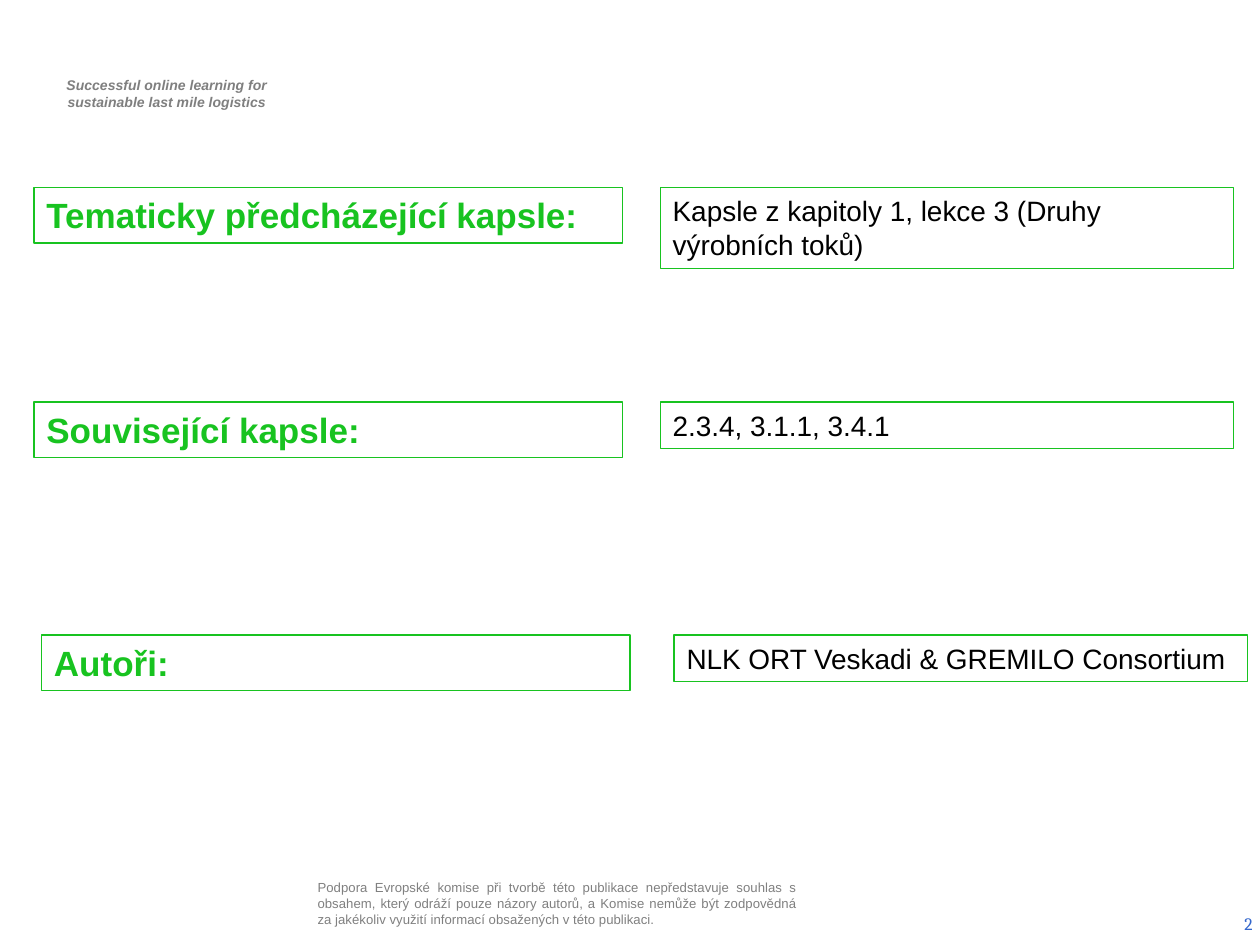
from dataclasses import dataclass

from pptx import Presentation
from pptx.dml.color import RGBColor
from pptx.enum.shapes import MSO_SHAPE
from pptx.enum.text import MSO_ANCHOR, MSO_AUTO_SIZE, PP_ALIGN
from pptx.util import Inches, Pt


@dataclass(frozen=True)
class Theme:
    sans: str = "Arial"
    serif: str = "Cambria"
    green: str = "18C320"
    black: str = "000000"
    white: str = "FFFFFF"
    header_gray: str = "7F7F7F"
    notice_gray: str = "808080"
    blue: str = "3366CC"
    label_size: float = 20
    value_size: float = 16
    number_size: float = 10
    header_size: float = 8
    notice_size: float = 7.5
    border: float = 0.75


class SlideBuilder:
    def __init__(self, slide, theme):
        self.slide = slide
        self.theme = theme

    def fill_text(self, shape, lines, size, color, font=None, bold=False, italic=False,
                  align=PP_ALIGN.LEFT, anchor=MSO_ANCHOR.TOP, inset=(0.1, 0.05)):
        frame = shape.text_frame
        frame.word_wrap = True
        frame.vertical_anchor = anchor
        frame.margin_left = frame.margin_right = Inches(inset[0])
        frame.margin_top = frame.margin_bottom = Inches(inset[1])
        frame.text = "\n".join(lines)
        for para in frame.paragraphs:
            para.alignment = align
            for span in para.runs:
                span.font.name = font or self.theme.sans
                span.font.size = Pt(size)
                span.font.bold = bold
                span.font.italic = italic
                span.font.color.rgb = RGBColor.from_string(color)

    def text(self, left, top, width, height, lines, size, color, **style):
        box = self.slide.shapes.add_textbox(
            Inches(left), Inches(top), Inches(width), Inches(height))
        self.fill_text(box, lines, size, color, **style)

    def framed(self, left, top, width, height, text, size, color, bold=False):
        box = self.slide.shapes.add_shape(
            MSO_SHAPE.RECTANGLE, Inches(left), Inches(top), Inches(width), Inches(height))
        box.shadow.inherit = False
        box.fill.solid()
        box.fill.fore_color.rgb = RGBColor.from_string(self.theme.white)
        box.line.color.rgb = RGBColor.from_string(self.theme.green)
        box.line.width = Pt(self.theme.border)
        self.fill_text(box, [text], size, color, bold=bold)
        box.text_frame.auto_size = MSO_AUTO_SIZE.SHAPE_TO_FIT_TEXT

    def label(self, left, top, text):
        self.framed(left, top, 4.67, 0.44, text,
                    self.theme.label_size, self.theme.green, bold=True)

    def value(self, left, top, height, text):
        self.framed(left, top, 4.55, height, text,
                    self.theme.value_size, self.theme.black)


def main():
    deck = Presentation()
    deck.slide_width, deck.slide_height = Inches(10), Inches(7.5)
    theme = Theme()
    page = SlideBuilder(deck.slides.add_slide(deck.slide_layouts[6]), theme)

    # Header, funding notice and page number
    page.text(0.31, 0.56, 2.03, 0.37,
              ["Successful online learning for", "sustainable last mile logistics"],
              theme.header_size, theme.header_gray,
              bold=True, italic=True, align=PP_ALIGN.CENTER)
    page.text(2.48, 6.92, 3.88, 0.5,
              ["Podpora Evropské komise při tvorbě této publikace nepředstavuje souhlas s "
               "obsahem, který odráží pouze názory autorů, a Komise nemůže být zodpovědná "
               "za jakékoliv využití informací obsažených v této publikaci."],
              theme.notice_size, theme.notice_gray,
              align=PP_ALIGN.JUSTIFY, anchor=MSO_ANCHOR.MIDDLE, inset=(0.04, 0.04))
    page.text(7.71, 7.13, 2.33, 0.4, ["2"], theme.number_size, theme.blue,
              font=theme.serif, align=PP_ALIGN.RIGHT, anchor=MSO_ANCHOR.MIDDLE)

    # Label and value pairs: top, label left, value left, value height, texts
    rows = [
        (1.49, 0.27, 5.24, 0.64, "Tematicky předcházející kapsle:",
         "Kapsle z kapitoly 1, lekce 3 (Druhy výrobních toků)"),
        (3.19, 0.27, 5.24, 0.37, "Související kapsle:", "2.3.4, 3.1.1, 3.4.1"),
        (5.04, 0.33, 5.35, 0.37, "Autoři:", "NLK ORT Veskadi & GREMILO Consortium"),
    ]
    for top, label_left, value_left, value_height, label, value in rows:
        page.label(label_left, top, label)
        page.value(value_left, top, value_height, value)

    deck.save("out.pptx")


if __name__ == "__main__":
    main()
